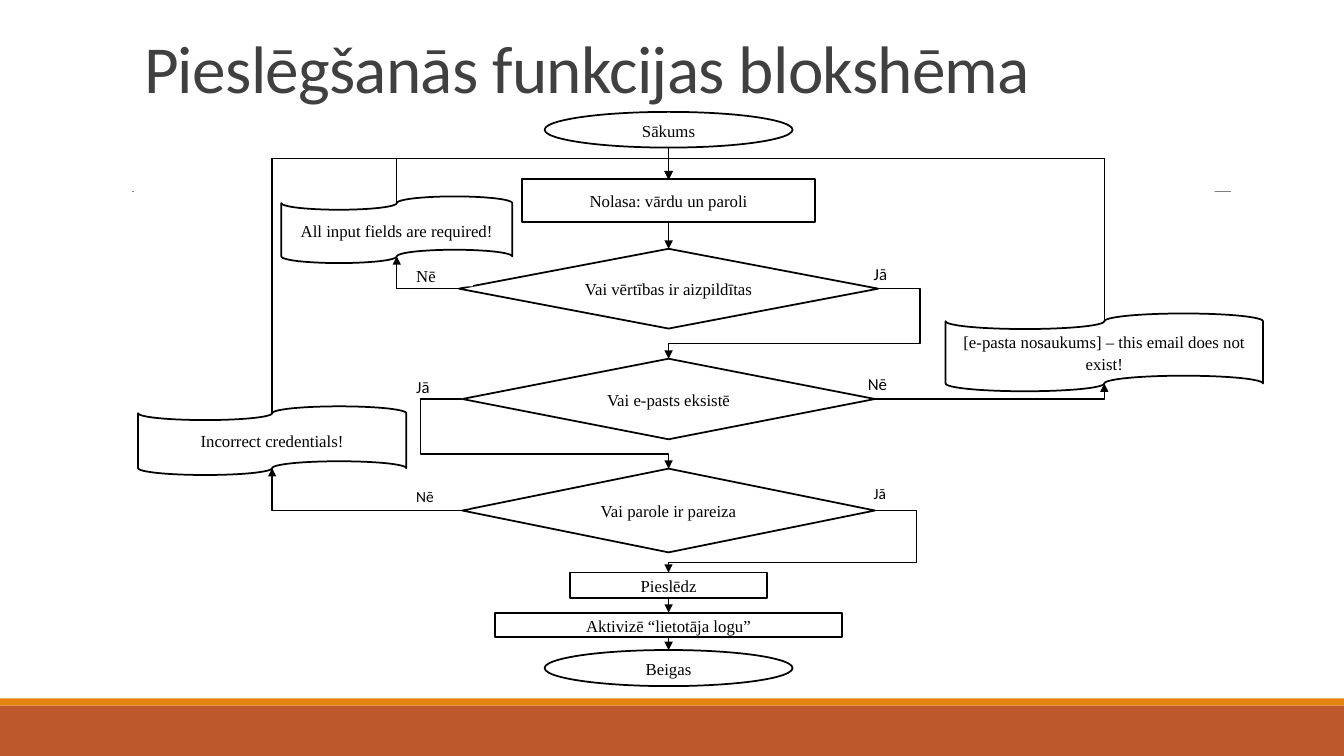
from lxml import etree
from pptx import Presentation
from pptx import util as u
from pptx.dml.color import RGBColor
from pptx.enum import shapes, text
from pptx.oxml.ns import qn

KIND = shapes.MSO_SHAPE
LINK = shapes.MSO_CONNECTOR
TOP, LEFT, BOTTOM, RIGHT = range(4)  # connection sites
SERIF, SANS = "Times New Roman", "Calibri"


def color(value):
    return RGBColor.from_string(value)


def add_block(slide, kind, x, y, w, h, fill="FFFFFF", line=None):
    sp = slide.shapes.add_shape(kind, u.Cm(x), u.Cm(y), u.Cm(w), u.Cm(h))
    sp.shadow.inherit = False
    sp.fill.solid()
    sp.fill.fore_color.rgb = color(fill)
    if line:
        sp.line.color.rgb = color(line)
        sp.line.width = u.Pt(1.25)
    else:
        sp.line.fill.background()
    return sp


def write(sp, words, frame, para, font, ink="000000"):
    tf = sp.text_frame
    p = tf.paragraphs[0]
    r = p.add_run()
    r.text = words
    for target, values in ((tf, frame), (p, para), (r.font, font)):
        for name, value in values.items():
            setattr(target, name, value)
    r.font.color.rgb = color(ink)
    return r


def add_step(slide, kind, x, y, w, h, words):
    sp = add_block(slide, kind, x, y, w, h, line="000000")
    write(sp, words,
          {"word_wrap": True, "vertical_anchor": text.MSO_ANCHOR.MIDDLE},
          {"alignment": text.PP_ALIGN.CENTER, "line_spacing": 1.06, "space_after": u.Pt(8)},
          {"name": SERIF, "size": u.Pt(12)})
    return sp


def site_point(sp, site):
    inset = sp.height // 10 if sp.auto_shape_type == KIND.WAVE or \
        sp.auto_shape_type == KIND.FLOWCHART_PUNCHED_TAPE else 0
    cx, cy = sp.left + sp.width // 2, sp.top + sp.height // 2
    return {TOP: (cx, sp.top + inset), BOTTOM: (cx, sp.top + sp.height - inset),
            LEFT: (sp.left, cy), RIGHT: (sp.left + sp.width, cy)}[site]


def add_link(slide, start, out, end, into, bends=0, adjust=None):
    """Glue an arrow between two sites; adjust maps both end points to bend ratios."""
    a, b = site_point(start, out), site_point(end, into)
    cxn = slide.shapes.add_connector(LINK.ELBOW if bends else LINK.STRAIGHT, *a, *b)
    cxn.begin_connect(start, out)
    cxn.end_connect(end, into)
    cxn.begin_x, cxn.begin_y = a
    cxn.end_x, cxn.end_y = b
    cxn.line.color.rgb = color("000000")
    cxn.line.width = u.Pt(1)
    sp_pr = cxn._element.spPr
    etree.SubElement(sp_pr.find(qn("a:ln")), qn("a:tailEnd"), type="triangle")
    etree.SubElement(sp_pr, qn("a:effectLst"))
    if bends:
        geom = sp_pr.find(qn("a:prstGeom"))
        geom.set("prst", f"bentConnector{bends + 1}")
        guides = geom.find(qn("a:avLst"))
        for i, ratio in enumerate(adjust(a, b) if adjust else (), 1):
            etree.SubElement(guides, qn("a:gd"), name=f"adj{i}",
                             fmla=f"val {round(ratio * 100000)}")
    if bends == 2:  # leaves upwards, so the frame is turned by 270 degrees
        w, h = abs(b[0] - a[0]), abs(b[1] - a[1])
        cxn.left, cxn.top = (a[0] + b[0] - h) // 2, (a[1] + b[1] - w) // 2
        cxn.width, cxn.height = h, w
        xfrm = sp_pr.find(qn("a:xfrm"))
        for flip in ("flipH", "flipV"):
            xfrm.attrib.pop(flip, None)
        xfrm.set("rot", str(270 * 60000))
        if b[0] < a[0]:
            xfrm.set("flipV", "1")
    return cxn


def around(gap):
    """Step 1.05 cm aside, then come back at a gap above the target."""
    def ratios(a, b):
        return -u.Cm(1.05) / abs(b[0] - a[0]), 1 - u.Cm(gap) / (b[1] - a[1])
    return ratios


def over_top(a, b):
    """Run back along the lane 0.53 cm above the target."""
    return (1 + u.Cm(0.53) / (a[1] - b[1]),)


def draw_footer(slide, x, y, w, h):
    rule = slide.shapes.add_connector(LINK.STRAIGHT, u.Cm(x + 3.33), u.Cm(4.83),
                                      u.Cm(x + 31.01), u.Cm(4.83))
    rule.line.color.rgb = color("808080")
    rule.line.width = u.Pt(0.5)
    etree.SubElement(rule._element.spPr, qn("a:effectLst"))
    add_block(slide, KIND.RECTANGLE, x, y + 0.18, w, h - 0.18, "BD582C")
    add_block(slide, KIND.RECTANGLE, x, y, w, 0.18, "E48312")


def draw_title(slide, x, y, w, h):
    sp = slide.shapes.add_textbox(u.Cm(x), u.Cm(y), u.Cm(w), u.Cm(h))
    r = write(sp, "Pieslēgšanās funkcijas blokshēma",
              {"word_wrap": True, "vertical_anchor": text.MSO_ANCHOR.BOTTOM},
              {"line_spacing": 0.85}, {"name": SANS, "size": u.Pt(48)}, "404040")
    r.font._element.set("spc", "-50")


def draw_flowchart(slide, x, y, w, h):
    add_block(slide, KIND.RECTANGLE, x, y, w, h)
    axis = x + 13.47

    # Main column: kind, top, width, height, words
    column = [
        (KIND.OVAL, 0, 6.25, 0.9, "Sākums"),
        (KIND.RECTANGLE, 1.7, 7.37, 1.07, "Nolasa: vārdu un paroli"),
        (KIND.DIAMOND, 3.45, 10.57, 2.01, "Vai vērtības ir aizpildītas"),
        (KIND.DIAMOND, 6.22, 10.4, 2.03, "Vai e-pasts eksistē"),
        (KIND.DIAMOND, 8.99, 10.4, 2.11, "Vai parole ir pareiza"),
        (KIND.RECTANGLE, 11.61, 4.98, 0.64, "Pieslēdz"),
        (KIND.RECTANGLE, 12.62, 8.76, 0.61, "Aktivizē “lietotāja logu”"),
        (KIND.OVAL, 13.56, 6.25, 0.91, "Beigas"),
    ]
    begin, read, filled, exists, correct, login, window, finish = [
        add_step(slide, kind, axis - bw / 2, y + top, bw, bh, words)
        for kind, top, bw, bh, words in column]

    # Branch labels
    labels = [
        (6.86, 3.71, 1.68, 0.69, "Nē", SERIF, 12),
        (6.86, 6.53, 1.42, 0.69, "Jā", SANS, 12),
        (6.86, 9.3, 1.6, 0.69, "Nē", SANS, 11),
        (18.39, 3.66, 1.42, 0.69, "Jā", SANS, 12),
        (18.24, 6.45, 1.68, 0.56, "Nē", SANS, 12),
        (18.39, 9.22, 1.37, 0.69, "Jā", SANS, 11),
    ]
    for lx, ly, lw, lh, words, name, size in labels:
        sp = add_block(slide, KIND.RECTANGLE, x + lx, y + ly, lw, lh)
        write(sp, words, {"word_wrap": False, "vertical_anchor": text.MSO_ANCHOR.TOP},
              {"alignment": text.PP_ALIGN.LEFT, "line_spacing": 1.06, "space_after": u.Pt(8)},
              {"name": name, "size": u.Pt(size)})

    # Error messages
    messages = [
        (3.71, 2.13, 5.82, 1.68, "All input fields are required!"),
        (20.45, 5.08, 8, 1.96, "[e-pasta nosaukums] – this email does not exist!"),
        (0.1, 7.42, 6.76, 1.73, "Incorrect credentials!"),
    ]
    required, unknown, incorrect = [
        add_step(slide, KIND.FLOWCHART_PUNCHED_TAPE, x + mx, y + my, mw, mh, words)
        for mx, my, mw, mh, words in messages]

    # Straight arrows down the column
    for start, end in ((begin, read), (read, filled), (login, window), (window, finish)):
        add_link(slide, start, BOTTOM, end, TOP)

    # Arrows to the next step
    for start, out, end, gap in ((filled, RIGHT, exists, 0.39), (exists, LEFT, correct, 0.37),
                                 (correct, RIGHT, login, 0.26)):
        add_link(slide, start, out, end, TOP, 3, around(gap))

    # Arrows to a message and back to reading
    for start, out, message in ((filled, LEFT, required), (exists, RIGHT, unknown),
                                (correct, LEFT, incorrect)):
        add_link(slide, start, out, message, BOTTOM, 1)
        add_link(slide, message, TOP, read, TOP, 2, over_top)


def main():
    prs = Presentation()
    prs.slide_width, prs.slide_height = u.Cm(33.87), u.Cm(19.05)
    slide = prs.slides.add_slide(prs.slide_layouts[6])
    draw_footer(slide, 0, 17.6, 33.87, 1.45)
    draw_title(slide, 3.38, 0.81, 28.45, 2.01)
    draw_flowchart(slide, 3.38, 2.82, 27.23, 14.2)
    prs.save("out.pptx")


if __name__ == "__main__":
    main()
